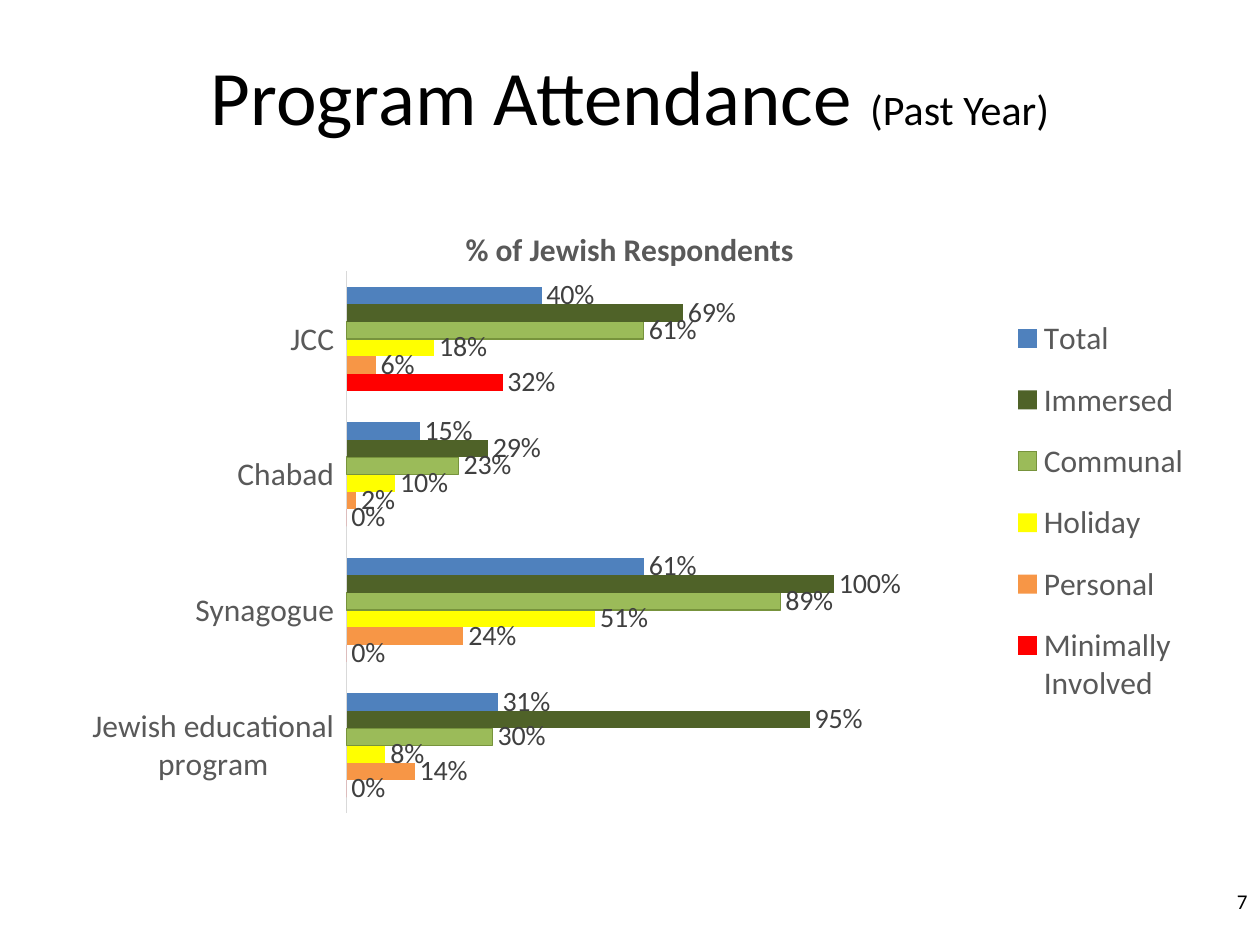
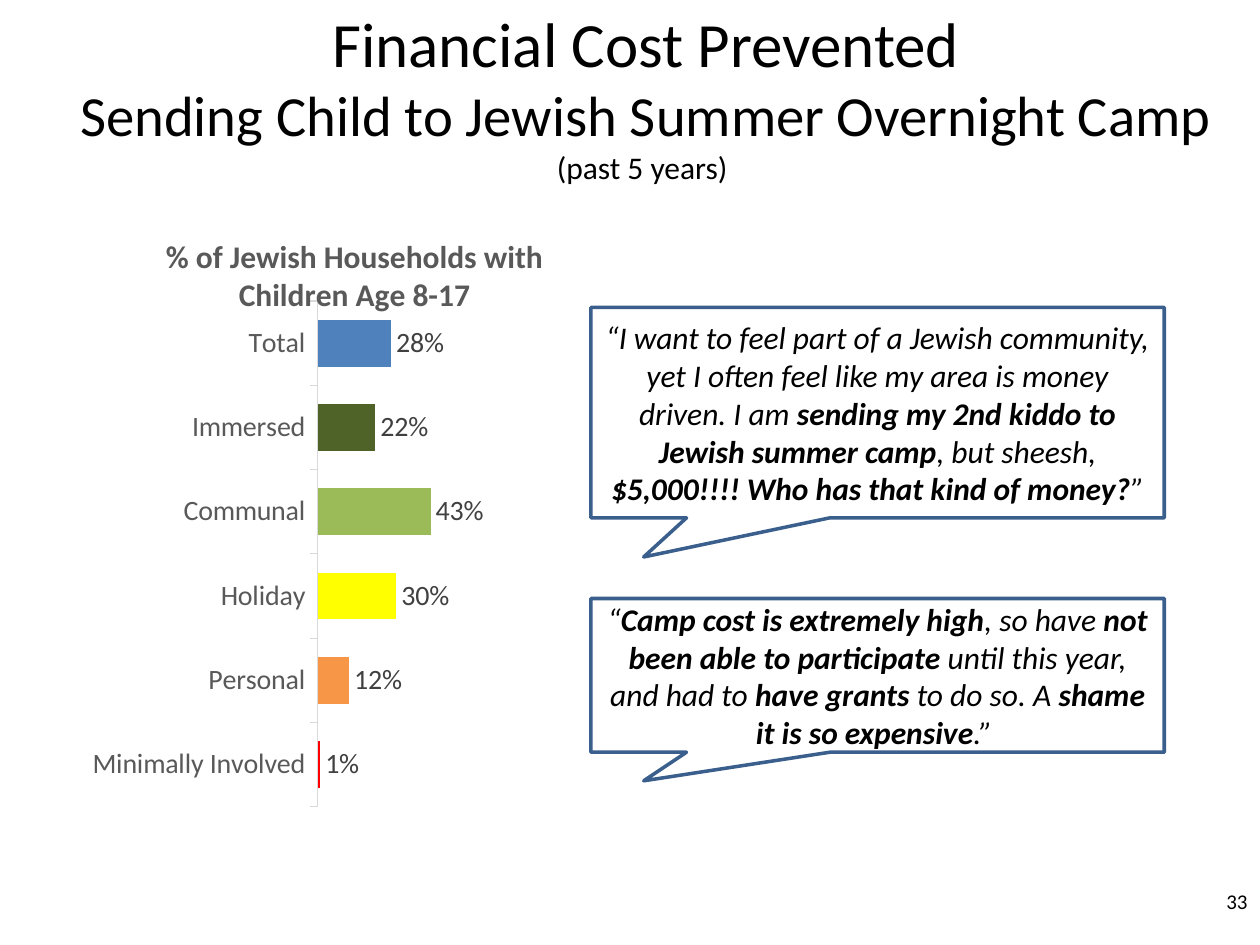
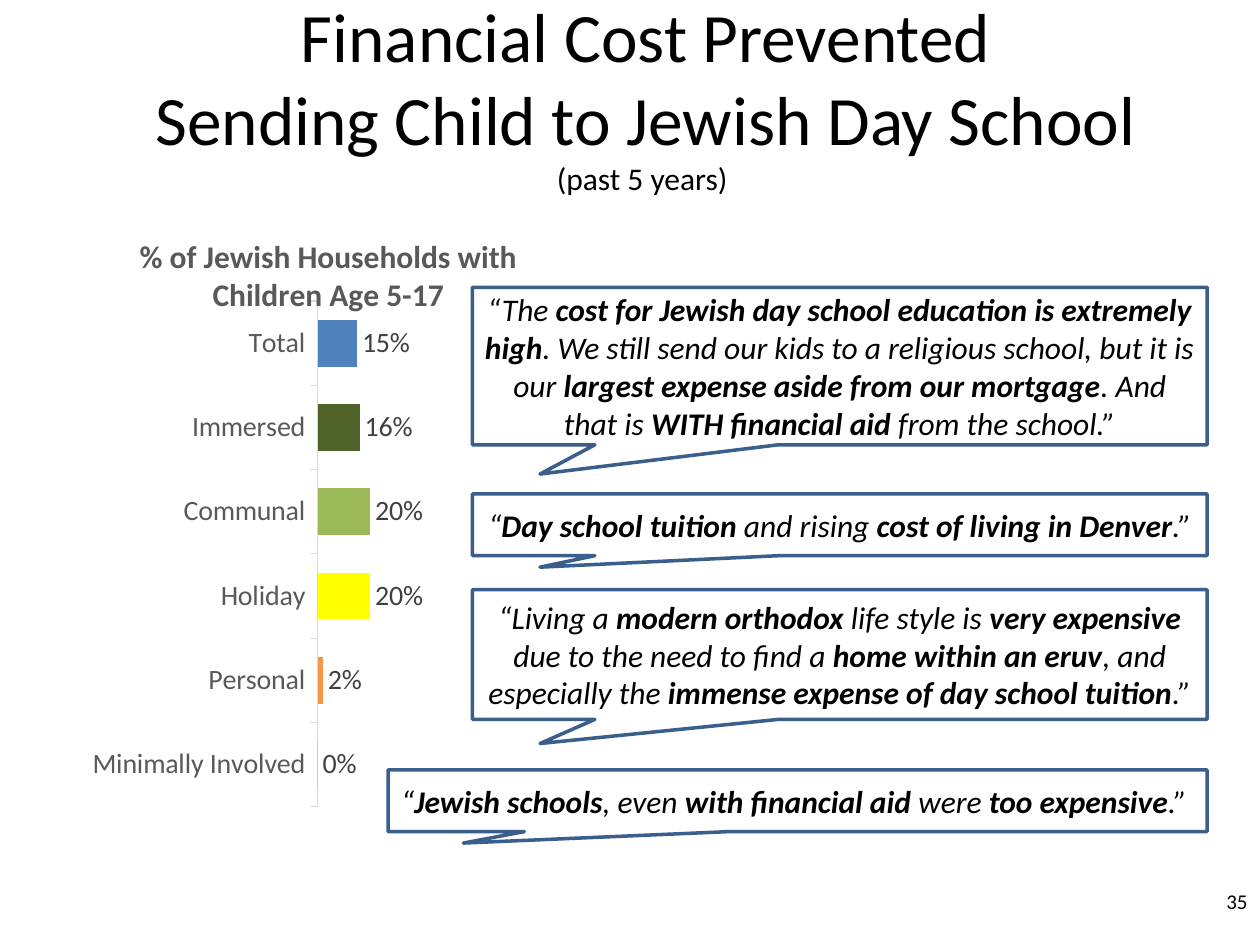
from dataclasses import dataclass

from lxml.etree import SubElement
from pptx import Presentation
from pptx.chart.data import CategoryChartData
from pptx.dml.color import RGBColor
from pptx.enum.chart import XL_CHART_TYPE as ChartType
from pptx.enum.chart import XL_LABEL_POSITION as LabelPosition
from pptx.enum.chart import XL_LEGEND_POSITION as LegendPosition
from pptx.enum.chart import XL_TICK_LABEL_POSITION as TickLabels
from pptx.enum.chart import XL_TICK_MARK as TickMark
from pptx.enum.shapes import MSO_SHAPE as Preset
from pptx.enum.text import MSO_ANCHOR as Anchor
from pptx.enum.text import PP_ALIGN as Align
from pptx.oxml.ns import qn
from pptx.util import Inches, Pt

FONT = "Calibri"
BLACK, WHITE = "000000", "FFFFFF"
CHART_TEXT, LABEL_TEXT, AXIS_LINE = "595959", "404040", "D9D9D9"
CALLOUT_LINE, COMMUNAL_LINE = "3A5F8C", "77933C"
GROUP_COLORS = {
    "Minimally Involved": "FF0000",
    "Personal": "F79646",
    "Holiday": "FFFF00",
    "Communal": "9BBB59",
    "Immersed": "4F6228",
    "Total": "4F81BD",
}


@dataclass(frozen=True)
class Box:
    """A rectangle, in inches on a slide or in fractions of a chart."""

    left: float
    top: float
    width: float
    height: float

    def inches(self) -> tuple:
        """Return the four lengths for a shape call."""
        return tuple(map(Inches, (self.left, self.top, self.width, self.height)))


@dataclass(frozen=True)
class Span:
    """A piece of text in one style; a newline in it is a line break."""

    text: str
    size: float
    bold: bool = False
    italic: bool = False


@dataclass(frozen=True)
class Quote:
    """A callout whose text alternates plain and bold at each bar."""

    box: Box
    text: str


@dataclass(frozen=True)
class BarStyle:
    """The layout of one bar chart."""

    box: Box
    plot: Box
    title_at: tuple[float, float]
    gap: int
    axis_size: int
    tick: TickMark


@dataclass(frozen=True)
class CostSlide:
    """A slide on costs: title, share per group and quotes."""

    number: int
    title: tuple[Span, ...]
    ages: str
    title_left: float
    shares: tuple[float, ...]
    quotes: tuple[Quote, ...]


ATTENDANCE_TITLE = (Span("Program Attendance ", 44), Span("(Past Year)", 24))
PROGRAMS = ("Jewish educational program", "Synagogue", "Chabad", "JCC")
ATTENDANCE = {
    "Minimally Involved": (0, 0, 0, 0.32),
    "Personal": (0.14, 0.24, 0.02, 0.06),
    "Holiday": (0.08, 0.51, 0.1, 0.18),
    "Communal": (0.3, 0.89, 0.23, 0.61),
    "Immersed": (0.95, 1, 0.29, 0.69),
    "Total": (0.31, 0.61, 0.15, 0.4),
}
PAST_YEARS = Span("(past 5 years) ", 18)
COST_SLIDES = (
    CostSlide(
        33,
        (
            Span("Financial Cost Prevented\n", 36),
            Span("Sending Child to Jewish Summer Overnight Camp\n", 32.4),
            PAST_YEARS,
        ),
        "8-17",
        0.18,
        (0.01, 0.12, 0.3, 0.43, 0.22, 0.28),
        (
            Quote(
                Box(4.69, 2.44, 4.55, 1.67),
                "“I want to feel part of a Jewish community, yet I often feel like my area "
                "is money driven. I am |sending my 2nd kiddo to Jewish summer camp|, but "
                "sheesh, |$5,000!!!! Who has that kind of money?|”",
            ),
            Quote(
                Box(4.69, 4.75, 4.55, 1.22),
                "“|Camp cost is extremely high|, so have |not been able to participate| "
                "until this year, and had to |have grants| to do so. A |shame it is so "
                "expensive|.” ",
            ),
        ),
    ),
    CostSlide(
        35,
        (
            Span("Financial Cost Prevented\nSending Child to Jewish Day School\n", 39.6),
            PAST_YEARS,
        ),
        "5-17",
        0.13,
        (0, 0.02, 0.2, 0.2, 0.16, 0.15),
        (
            Quote(
                Box(3.75, 2.28, 5.83, 1.25),
                "“The |cost for Jewish day school education is extremely high|. We still "
                "send our kids to a religious school, but it is our |largest expense aside "
                "from our mortgage|. And that is |WITH financial aid| from the school.”",
            ),
            Quote(
                Box(3.75, 3.92, 5.83, 0.49),
                "“|Day school tuition| and rising |cost of living in Denver|.” ",
            ),
            Quote(
                Box(3.75, 4.68, 5.83, 1.03),
                "“Living a |modern orthodox| life style is |very expensive| due to the "
                "need to find a |home within an eruv|, and especially the |immense expense "
                "of day school tuition|.” ",
            ),
            Quote(
                Box(3.08, 6.11, 6.5, 0.49),
                "“|Jewish schools|, even |with financial aid| were |too expensive|.” ",
            ),
        ),
    ),
)


def rgb(color: str) -> RGBColor:
    """Turn a hex string into a colour."""
    return RGBColor.from_string(color)


def style_font(font, size: float, color: str = BLACK, bold: bool = False) -> None:
    """Set the face, size, colour and weight of a font."""
    font.name, font.size, font.bold = FONT, Pt(size), bold
    font.color.rgb = rgb(color)


def write(shape, spans: tuple[Span, ...], align: Align) -> None:
    """Write spans as one paragraph, centred vertically in the shape."""
    frame = shape.text_frame
    frame.word_wrap, frame.vertical_anchor = True, Anchor.MIDDLE
    paragraph = frame.paragraphs[0]
    paragraph.alignment = align
    for span in spans:
        for position, line in enumerate(span.text.split("\n")):
            if position:
                paragraph.add_line_break()
            if line:
                run = paragraph.add_run()
                run.text = line
                style_font(run.font, span.size, BLACK, span.bold)
                run.font.italic = span.italic


def add_slide(deck, title: tuple[Span, ...], title_width: float, number: int):
    """Add a blank slide with its title and slide number."""
    slide = deck.slides.add_slide(deck.slide_layouts[6])
    heading = slide.shapes.add_textbox(*Box(0.5, 0.13, title_width, 1.25).inches())
    write(heading, title, Align.CENTER)
    footer = slide.shapes.add_textbox(*Box(7.67, 6.95, 2.33, 0.4).inches())
    write(footer, (Span(str(number), 12),), Align.RIGHT)
    return slide


def place(element, index: int, **settings) -> None:
    """Give a chart part a manual layout as its child at the index."""
    for old in element.findall(qn("c:layout")):
        element.remove(old)
    layout = SubElement(element, qn("c:layout"))
    manual = SubElement(layout, qn("c:manualLayout"))
    for tag, value in settings.items():
        SubElement(manual, qn(f"c:{tag}")).set("val", str(value))
    element.insert(index, layout)


def place_box(element, index: int, box: Box, **target) -> None:
    """Lay a chart part out in a box of chart fractions."""
    place(element, index, **target, xMode="edge", yMode="edge",
          x=box.left, y=box.top, w=box.width, h=box.height)


def chart_part(chart, tag: str):
    """Return the XML element of a main part of a chart."""
    return chart.element.xpath(f"c:chart/c:{tag}")[0]


def add_bars(slide, title: str, categories: tuple, shares: dict, style: BarStyle):
    """Add a bar chart of shares with a title and value labels."""
    data = CategoryChartData(number_format="0%")
    data.categories = categories
    for name, values in shares.items():
        data.add_series(name, values)
    chart = slide.shapes.add_chart(
        ChartType.BAR_CLUSTERED, *style.box.inches(), data
    ).chart
    style_font(chart.font, 10)
    chart.has_legend = False

    chart.has_title = True
    heading = chart.chart_title.text_frame.paragraphs[0].add_run()
    heading.text = title
    style_font(heading.font, 18, CHART_TEXT, True)
    left, top = style.title_at
    place(chart_part(chart, "title"), 1, xMode="edge", yMode="edge", x=left, y=top)
    place_box(chart_part(chart, "plotArea"), 0, style.plot, layoutTarget="inner")

    groups = chart.category_axis
    groups.major_tick_mark, groups.minor_tick_mark = style.tick, TickMark.NONE
    groups.tick_label_position = TickLabels.LOW
    groups.format.line.color.rgb = rgb(AXIS_LINE)
    groups.format.line.width = Pt(0.75)
    style_font(groups.tick_labels.font, style.axis_size, CHART_TEXT)
    scale = chart.value_axis
    scale.minimum_scale, scale.maximum_scale = 0, 1
    scale.has_major_gridlines, scale.visible = False, False

    plot = chart.plots[0]
    plot.gap_width, plot.vary_by_categories = style.gap, False
    for series in plot.series:
        fill(series, GROUP_COLORS.get(series.name, GROUP_COLORS["Total"]))
        labels = series.data_labels
        labels.show_value, labels.position = True, LabelPosition.OUTSIDE_END
        labels.number_format, labels.number_format_is_linked = "0%", False
        style_font(labels.font, 16, LABEL_TEXT)
    return chart


def fill(part, color: str) -> None:
    """Fill a series or a point with one colour."""
    part.format.fill.solid()
    part.format.fill.fore_color.rgb = rgb(color)


def add_quote(slide, quote: Quote) -> None:
    """Add a speech callout with a quote."""
    callout = slide.shapes.add_shape(Preset.RECTANGULAR_CALLOUT, *quote.box.inches())
    callout.adjustments[0], callout.adjustments[1] = -0.408, 0.686
    callout.shadow.inherit = False
    callout.fill.solid()
    callout.fill.fore_color.rgb = rgb(WHITE)
    callout.line.color.rgb = rgb(CALLOUT_LINE)
    callout.line.width = Pt(2)
    spans = tuple(
        Span(text, 18, bold=position % 2 == 1, italic=True)
        for position, text in enumerate(quote.text.split("|"))
    )
    write(callout, spans, Align.CENTER)


def add_attendance(deck) -> None:
    """Add the slide on program attendance per group."""
    slide = add_slide(deck, ATTENDANCE_TITLE, 9, 7)
    style = BarStyle(Box(0.5, 1.51, 9, 4.95), Box(0.25, 0.13, 0.43, 0.87),
                     (0.35, 0.05), 182, 18, TickMark.NONE)
    chart = add_bars(slide, "% of Jewish Respondents", PROGRAMS, ATTENDANCE, style)
    for series in chart.plots[0].series:
        if series.name == "Communal":
            series.format.line.color.rgb = rgb(COMMUNAL_LINE)
            series.format.line.width = Pt(0.75)
    chart.has_legend = True
    legend = chart.legend
    legend.position, legend.include_in_layout = LegendPosition.RIGHT, False
    style_font(legend.font, 18, CHART_TEXT)
    place_box(chart_part(chart, "legend"), 1, Box(0.83, 0.17, 0.17, 0.69))


def add_cost(deck, cost: CostSlide) -> None:
    """Add a slide on a cost that kept families away."""
    slide = add_slide(deck, cost.title, 9.25, cost.number)
    style = BarStyle(Box(0.52, 1.72, 4.17, 4.78), Box(0.48, 0.14, 0.5, 0.84),
                     (cost.title_left, 0.02), 80, 16, TickMark.OUTSIDE)
    title = f"% of Jewish Households with Children Age {cost.ages}"
    chart = add_bars(slide, title, tuple(GROUP_COLORS), {"Series 1": cost.shares}, style)
    bars = chart.plots[0].series[0].points
    for position, color in enumerate(GROUP_COLORS.values()):
        fill(bars[position], color)
    for quote in cost.quotes:
        add_quote(slide, quote)


def main() -> None:
    """Build the deck."""
    deck = Presentation()
    deck.slide_width, deck.slide_height = Inches(10), Inches(7.5)
    add_attendance(deck)
    for cost in COST_SLIDES:
        add_cost(deck, cost)
    deck.save("out.pptx")


if __name__ == "__main__":
    main()
